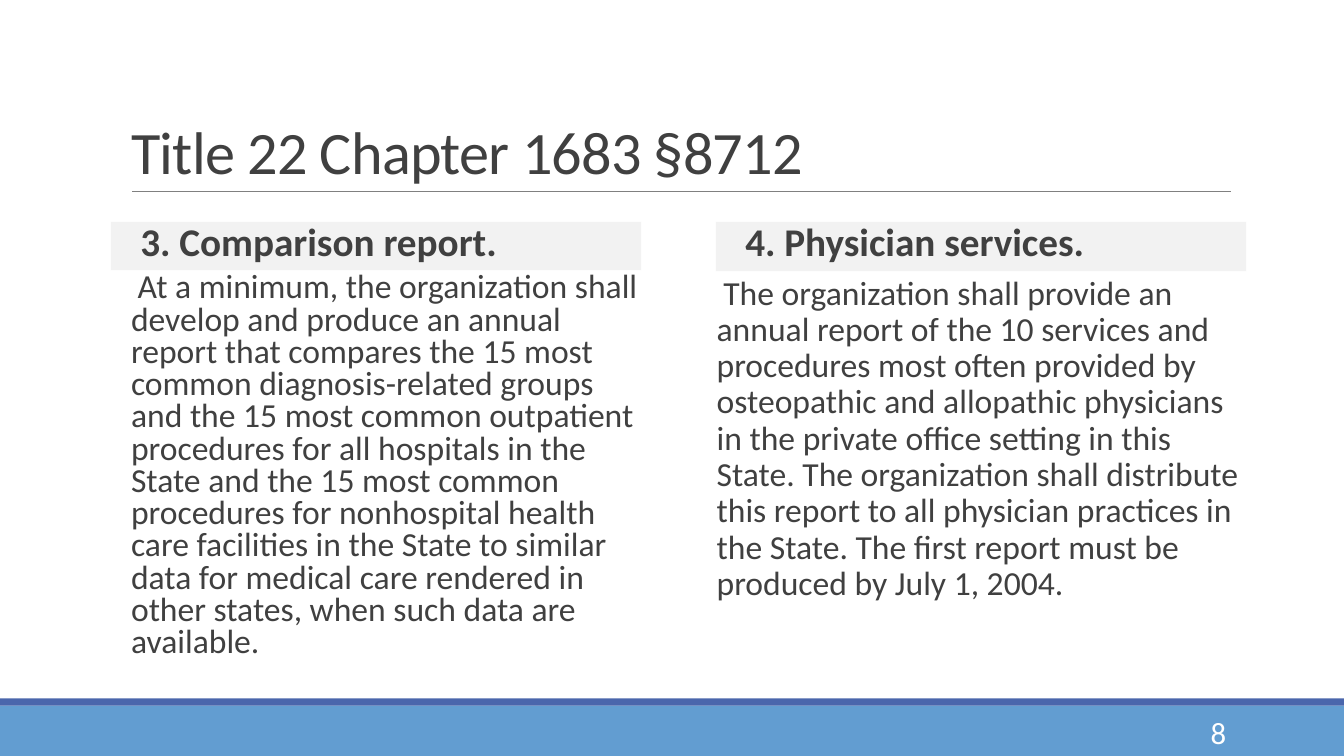
from dataclasses import dataclass
from lxml.etree import SubElement
from pptx import Presentation
from pptx.dml.color import RGBColor
from pptx.enum.shapes import MSO_CONNECTOR, MSO_SHAPE
from pptx.enum.text import MSO_ANCHOR, MSO_AUTO_SIZE, PP_ALIGN
from pptx.oxml.ns import qn
from pptx.util import Inches, Pt

TITLE = "Title 22 Chapter 1683 §8712"
NUMBER = "8"
HEADS = [
    ("3. Comparison report.", (1.1, 2.2, 5.26, 0.48)),
    ("4. Physician services.", (7.1, 2.2, 5.26, 0.49)),
]
BODIES = [
    ("At a minimum, the organization shall develop and produce an annual report "
     "that compares the 15 most common diagnosis-related groups and the 15 most "
     "common outpatient procedures for all hospitals in the State and the 15 most "
     "common procedures for nonhospital health care facilities in the State to "
     "similar data for medical care rendered in other states, when such data are "
     "available.", (1.2, 2.66, 5.16, 4.19), 0, 0.8),
    ("The organization shall provide an annual report of the 10 services and "
     "procedures most often provided by osteopathic and allopathic physicians in "
     "the private office setting in this State. The organization shall distribute "
     "this report to all physician practices in the State. The first report must "
     "be produced by July 1, 2004.", (6.91, 2.69, 5.64, 3.37), 0.1, 0.9),
]


@dataclass(frozen=True)
class Theme:
    face: str = "Calibri"
    ink: str = "404040"
    white: str = "FFFFFF"
    blue: str = "629DD1"
    navy: str = "4A66AC"
    pale: str = "F2F2F2"
    rule: str = "808080"
    title: int = 43
    head: int = 28
    body: int = 24
    number: int = 22


theme = Theme()
deck = Presentation()
deck.slide_width, deck.slide_height = Inches(13.33), Inches(7.5)
slide = deck.slides.add_slide(deck.slide_layouts[5])
shapes = slide.shapes


def color(code):
    return RGBColor.from_string(code)


def band(box, fill):
    shape = shapes.add_shape(MSO_SHAPE.RECTANGLE, *map(Inches, box))
    shape.shadow.inherit = False
    shape.fill.solid()
    shape.fill.fore_color.rgb = color(fill)
    shape.line.fill.background()
    return shape


def write(shape, text, size, ink=theme.ink, bold=False, align=PP_ALIGN.LEFT,
          anchor=MSO_ANCHOR.TOP, space=1.0):
    frame = shape.text_frame
    frame.text = text
    frame.word_wrap = True
    frame.auto_size = MSO_AUTO_SIZE.NONE
    frame.vertical_anchor = anchor
    para = frame.paragraphs[0]
    para.alignment = align
    para.line_spacing = space
    font = para.font
    font.name, font.size, font.bold = theme.face, Pt(size), bold
    font.color.rgb = color(ink)
    return para


def bullet(para):
    para.space_before, para.space_after = Pt(12), Pt(2)
    props = para._p.get_or_add_pPr()
    props.set("marL", str(Inches(0.1)))
    props.set("indent", str(Inches(-0.1)))
    tint = SubElement(props, qn("a:buClr"))
    SubElement(tint, qn("a:srgbClr"), val=theme.navy)
    mark = SubElement(props, qn("a:buChar"), char=" ")
    base = props.find(qn("a:defRPr"))
    base.addprevious(tint)
    base.addprevious(mark)


band((0, 7, 13.33, 0.5), theme.blue)
band((0, 6.93, 13.33, 0.07), theme.navy)
rule = shapes.add_connector(MSO_CONNECTOR.STRAIGHT, *map(Inches, (1.31, 1.9, 12.21, 1.9)))
rule.line.color.rgb = color(theme.rule)
rule.line.width = Pt(0.5)
SubElement(rule._element.spPr, qn("a:effectLst"))

title = shapes.title
title.left, title.top, title.width, title.height = map(Inches, (1.2, 0.31, 11.06, 1.59))
para = write(title, TITLE, theme.title, anchor=MSO_ANCHOR.BOTTOM, space=0.85)
para.runs[0]._r.get_or_add_rPr().set("spc", "-50")

for text, box in HEADS:
    bullet(write(band(box, theme.pale), text, theme.head, bold=True, space=0.8))

for text, box, inset, space in BODIES:
    shape = shapes.add_textbox(*map(Inches, box))
    frame = shape.text_frame
    frame.margin_left = frame.margin_right = Inches(inset)
    bullet(write(shape, text, theme.body, space=space))

number = shapes.add_textbox(*map(Inches, (10.83, 7.06, 1.43, 0.4)))
write(number, NUMBER, theme.number, theme.white, align=PP_ALIGN.RIGHT, anchor=MSO_ANCHOR.MIDDLE)

deck.save("out.pptx")
